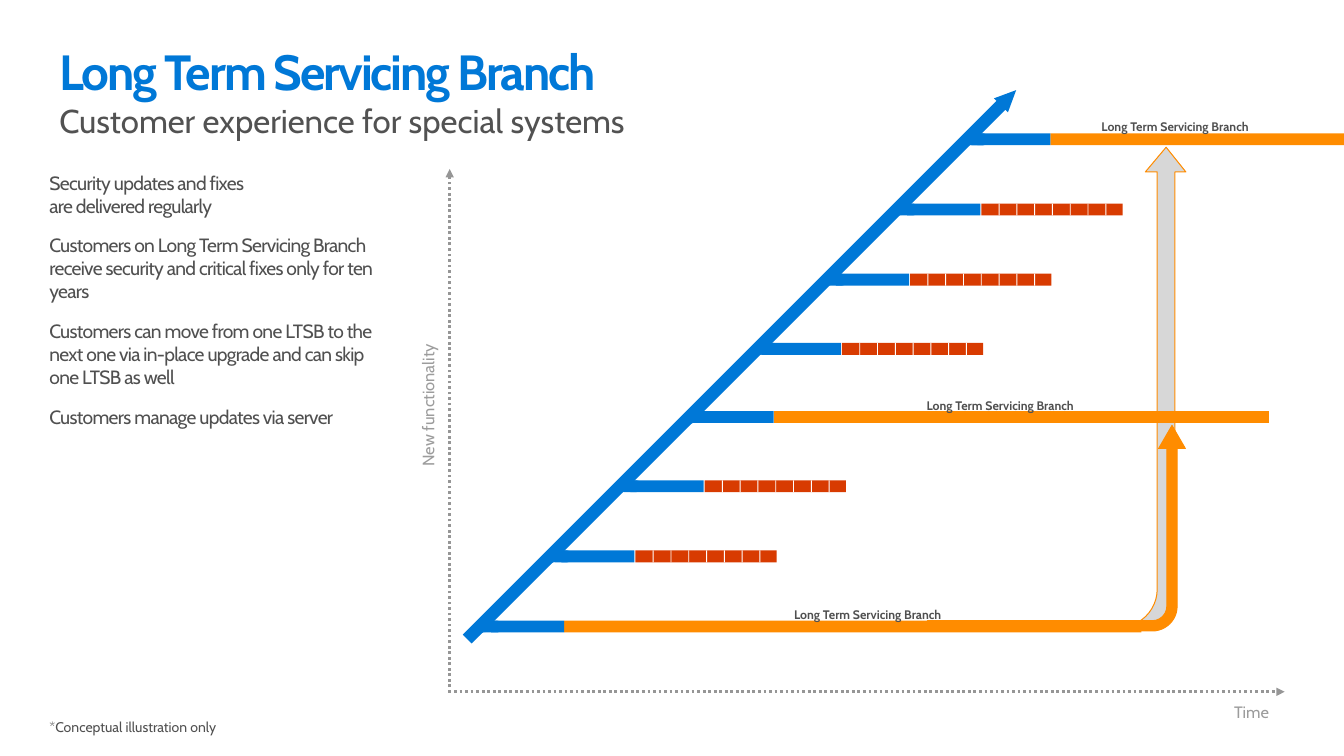
from math import hypot

from lxml.etree import SubElement
from pptx import Presentation
from pptx.dml.color import RGBColor
from pptx.enum.dml import MSO_LINE
from pptx.enum.shapes import MSO_CONNECTOR, MSO_SHAPE as SHAPE
from pptx.enum.text import MSO_ANCHOR as ANCHOR, PP_ALIGN as ALIGN
from pptx.oxml.ns import qn
from pptx.util import Inches, Pt

BLUE, ORANGE, RED = "0078D7", "FF8C00", "D83B01"
SILVER, WHITE, AXIS_GRAY = "D7D7D7", "FFFFFF", "969696"

TITLE = dict(size=36, color=BLUE, bold=True, tracking=-150)
SUBTITLE = dict(size=24, color="525252")
BODY = dict(size=14, color="505050", tracking=-50)
FOOTNOTE = dict(size=10.2, color="505050")
AXIS = dict(size=12, color="9C9C9C")
LABEL = dict(size=9, color="505050", bold=True)

HEADING = [[("Long Term Servicing Branch", TITLE),
            ("Customer experience for special systems", SUBTITLE)]]
POINTS = [
    ["Security updates and fixes", "are delivered regularly"],
    ["Customers on Long Term Servicing Branch receive security and critical fixes only for ten years"],
    ["Customers can move from one LTSB to the next one via in-place upgrade and can skip one LTSB as well"],
    ["Customers manage updates via server"],
]
BRANCH_LABEL = "Long Term Servicing Branch"
LABEL_POSITIONS = [(7.26, 6.16), (8.6, 4.04), (10.37, 1.22)]

BRANCHES = [
    (4.85, 6.28, 11.55), (5.56, 5.57, None), (6.26, 4.86, None), (6.97, 4.16, 12.84),
    (7.65, 3.47, None), (8.34, 2.77, None), (9.06, 2.06, None), (9.77, 1.35, 13.6),
]
BAR, BLUE_LENGTH = 0.12, 0.86
RED_LENGTH, RED_GAP, RED_STEP, CUT, CUTS = 1.43, 0.01, 0.18, 0.01, 7

TREND_START, TREND_TIP, TREND_WIDTH = (4.73, 6.47), (10.28, 0.91), 0.2
AXES = [((4.54, 7), (13, 7)), ((4.55, 7.01), (4.55, 1.71))]

SKIP_ARROW = [
    (11.8, 1.49), (12, 1.74), (11.89, 1.74), (11.89, 5.96),
    ((11.89, 6.08), (11.85, 6.19), (11.79, 6.28)),
    (11.73, 6.36), (9.39, 6.36), (9.39, 6.35), (11.32, 6.35),
    ((11.53, 6.35), (11.71, 6.18), (11.71, 5.96)),
    (11.71, 1.74), (11.59, 1.74),
]
JOINT = [
    (-0.02, 0.08), (0.19, 0.08), (0.1, 0.11), (0.08, 0.11),
    ((0.05, 0.12), (0.03, 0.12), (0.02, 0.13)), (0, 0.15), (-0.02, 0.16),
]

presentation = Presentation()
presentation.slide_width, presentation.slide_height = Inches(13.6), Inches(7.65)
slide = presentation.slides.add_slide(presentation.slide_layouts[6])


def rgb(color):
    return RGBColor.from_string(color)


def paint(shape, fill, outline=None):
    shape.shadow.inherit = False
    shape.fill.solid()
    shape.fill.fore_color.rgb = rgb(fill)
    if outline:
        shape.line.color.rgb = rgb(outline)
        shape.line.width = Pt(0.75)
    else:
        shape.line.fill.background()
    return shape


def add_block(kind, box, fill, adjustments=(), rotation=0, outline=None):
    shape = slide.shapes.add_shape(kind, *map(Inches, box))
    for index, value in enumerate(adjustments):
        shape.adjustments[index] = value
    shape.rotation = rotation
    return paint(shape, fill, outline)


def flatten(outline, steps=12):
    points = []
    for part in outline:
        if not isinstance(part[0], tuple):
            points.append(part)
            continue
        curve = [points[-1], *part]
        for step in range(1, steps + 1):
            t = step / steps
            weights = ((1 - t) ** 3, 3 * t * (1 - t) ** 2, 3 * t * t * (1 - t), t ** 3)
            points.append(tuple(sum(w * p[axis] for w, p in zip(weights, curve)) for axis in (0, 1)))
    return points


def add_outline(outline, fill, left=0, top=0, line=None):
    points = [(Inches(left + x), Inches(top + y)) for x, y in flatten(outline)]
    builder = slide.shapes.build_freeform(*points[0])
    builder.add_line_segments(points[1:], close=True)
    return paint(builder.convert_to_shape(), fill, line)


def add_text(box, paragraphs, insets=(0, 0, 0, 0), anchor=ANCHOR.TOP, rotation=0, **layout):
    shape = slide.shapes.add_textbox(*map(Inches, box))
    shape.rotation = rotation
    frame = shape.text_frame
    frame.word_wrap = True
    frame.vertical_anchor = anchor
    for side, inset in zip(("left", "top", "right", "bottom"), insets):
        setattr(frame, f"margin_{side}", Inches(inset))
    for index, lines in enumerate(paragraphs):
        paragraph = frame.add_paragraph() if index else frame.paragraphs[0]
        for name, value in layout.items():
            setattr(paragraph, name, value)
        for number, (text, style) in enumerate(lines):
            if number:
                paragraph.add_line_break()
            run = paragraph.add_run()
            run.text = text
            run.font.color.rgb = rgb(style["color"])
            values = dict(name="Cabin", size=Pt(style["size"]), bold=style.get("bold", False))
            for name, value in values.items():
                setattr(run.font, name, value)
            run.font._element.set("spc", str(style.get("tracking", 0)))


def add_axis(start, end):
    connector = slide.shapes.add_connector(MSO_CONNECTOR.STRAIGHT, *map(Inches, start + end))
    connector.line.color.rgb = rgb(AXIS_GRAY)
    connector.line.width = Pt(2)
    connector.line.dash_style = MSO_LINE.ROUND_DOT
    properties = connector._element.spPr
    SubElement(properties.find(qn("a:ln")), qn("a:tailEnd"), type="triangle")
    SubElement(properties, qn("a:effectLst"))


def add_branch(left, top, orange_end):
    blue_end = left + BLUE_LENGTH
    if orange_end:
        add_block(SHAPE.RECTANGLE, (blue_end, top, orange_end - blue_end, BAR), ORANGE)
    else:
        red_start = blue_end + RED_GAP
        add_block(SHAPE.RECTANGLE, (red_start, top, RED_LENGTH, BAR), RED)
        for cut in range(1, CUTS + 1):
            add_block(SHAPE.RECTANGLE, (red_start + cut * RED_STEP - CUT / 2, top, CUT, BAR), WHITE)
    add_block(SHAPE.RECTANGLE, (left + BAR, top, BLUE_LENGTH - BAR, BAR), BLUE)
    add_block(SHAPE.ROUNDED_RECTANGLE, (left, top, 2 * BAR, BAR), BLUE, [0.5])
    add_outline(JOINT, BLUE, left, top)


def add_trend():
    (x1, y1), (x2, y2) = TREND_START, TREND_TIP
    length = hypot(x2 - x1, y2 - y1)
    box = ((x1 + x2 - TREND_WIDTH) / 2, (y1 + y2 - length) / 2, TREND_WIDTH, length)
    add_block(SHAPE.UP_ARROW, box, BLUE, [0.632, 1.091], 45)


add_outline(SKIP_ARROW, SILVER, line=ORANGE)
upgrade = add_block(SHAPE.BENT_ARROW, (9.65, 4.04, 2.08, 2.61), ORANGE,
                    [0.05, 0.065, 0.112, 0.121], 90, ORANGE)
upgrade._element.spPr.find(qn("a:xfrm")).set("flipH", "1")

for axis_line in AXES:
    add_axis(*axis_line)
for branch in BRANCHES:
    add_branch(*branch)
add_trend()

add_text((0.6, 0.32, 13, 1), HEADING, (0, 0.1, 0.16, 0.1))
add_text((0.5, 1.73, 3.43, 2.63), [[(line, BODY) for line in lines] for lines in POINTS],
         space_after=Pt(12))
add_text((0.5, 7.29, 2.53, 0.16), [[("*Conceptual illustration only", FOOTNOTE)]], line_spacing=0.9)
axis_insets = (0.1, 0.05, 0.1, 0.05)
add_text((3.22, 3.95, 2.22, 0.3), [[("New functionality", AXIS)]], axis_insets,
         rotation=270, alignment=ALIGN.CENTER)
add_text((12.08, 7.06, 0.86, 0.3), [[("Time", AXIS)]], axis_insets, alignment=ALIGN.RIGHT)
for left, top in LABEL_POSITIONS:
    add_text((left, top, 3.04, 0.12), [[(BRANCH_LABEL, LABEL)]], anchor=ANCHOR.MIDDLE,
             alignment=ALIGN.CENTER, line_spacing=Pt(11.2))

presentation.save("out.pptx")
